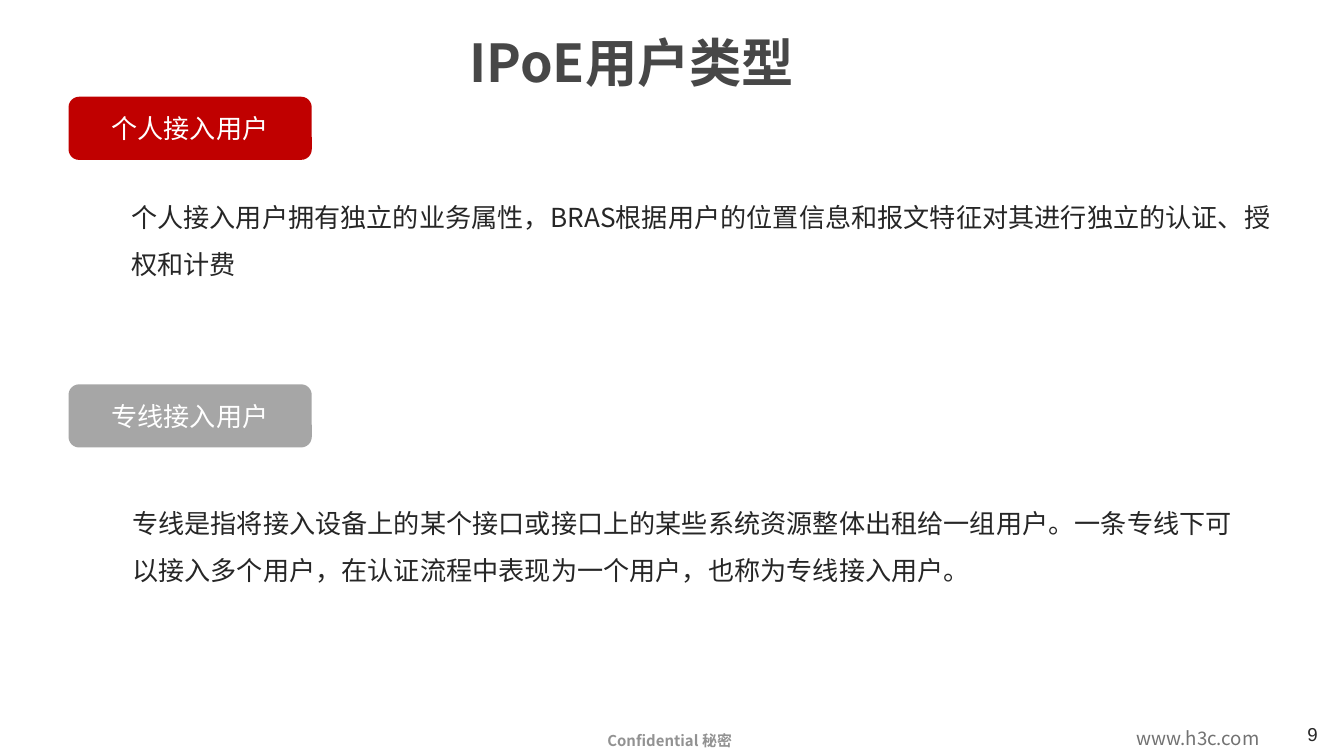
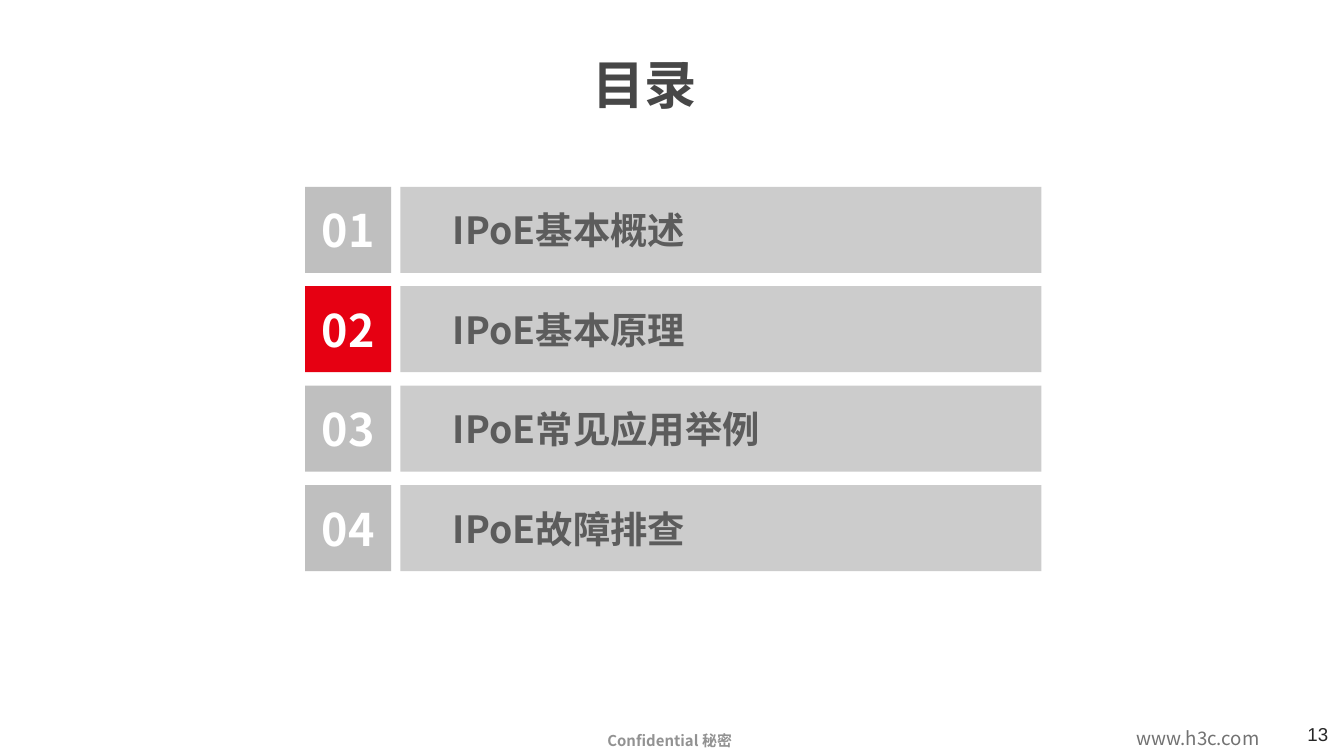
from lxml.etree import SubElement
from pptx import Presentation
from pptx.dml.color import RGBColor
from pptx.enum.shapes import MSO_SHAPE
from pptx.enum.text import MSO_ANCHOR, PP_ALIGN
from pptx.oxml.ns import qn
from pptx.util import Inches, Pt

# Content
USER_TYPES_TITLE = "IPoE用户类型"
AGENDA_TITLE = "目录"
AGENDA = ["IPoE基本概述", "IPoE基本原理", "IPoE常见应用举例", "IPoE故障排查"]
CURRENT_TOPIC = 2

# Colours and fonts
WHITE = RGBColor(0xFF, 0xFF, 0xFF)
INK = RGBColor(0x26, 0x26, 0x26)
TITLE_GREY = RGBColor(0x47, 0x47, 0x47)
TOPIC_GREY = RGBColor(0x5C, 0x5C, 0x5C)
URL_GREY = RGBColor(0x72, 0x72, 0x72)
SECRECY_GREY = RGBColor(0x92, 0x92, 0x92)
LABEL_RED = RGBColor(0xC0, 0x00, 0x00)
LABEL_GREY = RGBColor(0xA6, 0xA6, 0xA6)
NUMBER_RED = RGBColor(0xE6, 0x00, 0x12)
NUMBER_GREY = RGBColor(0xBF, 0xBF, 0xBF)
BAR_GREY = RGBColor(0xCC, 0xCC, 0xCC)
SANS = "Noto Sans CJK SC"

# Each user type: label, colour, label top, description, description box
USER_TYPES = [
    ("个人接入用户", LABEL_RED, 0.72,
     "个人接入用户拥有独立的业务属性，BRAS根据用户的位置信息和报文特征"
     "对其进行独立的认证、授权和计费",
     (0.83, 1.24, 8.82, 0.98)),
    ("专线接入用户", LABEL_GREY, 2.86,
     "专线是指将接入设备上的某个接口或接口上的某些系统资源整体出租给一组用户。"
     "一条专线下可以接入多个用户，在认证流程中表现为一个用户，也称为专线接入用户。",
     (0.83, 3.44, 8.66, 1.14)),
]


def write(holder, text, size, colour, bold=False, align=PP_ALIGN.LEFT,
          font=SANS, anchor=MSO_ANCHOR.MIDDLE, wrap=True):
    frame = holder.text_frame
    frame.text = text
    frame.word_wrap = wrap
    frame.vertical_anchor = anchor
    paragraph = frame.paragraphs[0]
    paragraph.alignment = align
    run = paragraph.runs[0]
    run.font.size = Pt(size)
    run.font.bold = bold
    run.font.color.rgb = colour
    run.font.name = font
    # East Asian glyphs take the same font
    SubElement(run.font._element, qn("a:ea"), typeface=font)
    return frame


def add_text(slide, box, text, size, colour, **style):
    holder = slide.shapes.add_textbox(*map(Inches, box))
    return write(holder, text, size, colour, **style)


def add_block(slide, kind, box, fill, text, size, colour, **style):
    block = slide.shapes.add_shape(kind, *map(Inches, box))
    block.shadow.inherit = False
    block.fill.solid()
    block.fill.fore_color.rgb = fill
    block.line.fill.background()
    return write(block, text, size, colour, **style)


def add_page(deck, title, title_box, number):
    slide = deck.slides.add_slide(deck.slide_layouts[6])
    # Footer
    add_text(slide, (4.42, 5.39, 1.15, 0.24), "Confidential 秘密", 8,
             SECRECY_GREY, bold=True)
    add_text(slide, (8.36, 5.36, 1.13, 0.27), "www.h3c.com", 10, URL_GREY,
             wrap=False)
    add_text(slide, (9.63, 5.33, 0.37, 0.27), str(number), 10, INK,
             font="Arial", anchor=MSO_ANCHOR.TOP, wrap=False)
    # Title
    add_text(slide, title_box, title, 28, TITLE_GREY, bold=True,
             align=PP_ALIGN.CENTER)
    return slide


def build_user_types(deck):
    slide = add_page(deck, USER_TYPES_TITLE, (0.2, 0.21, 9, 0.5), 9)
    rounded = MSO_SHAPE.ROUNDED_RECTANGLE
    for label, fill, top, description, box in USER_TYPES:
        add_block(slide, rounded, (0.51, top, 1.81, 0.47), fill, label, 14,
                  WHITE, align=PP_ALIGN.CENTER)
        frame = add_block(slide, rounded, box, WHITE, description, 14, INK)
        frame.paragraphs[0].line_spacing = 1.5


def build_agenda(deck):
    slide = add_page(deck, AGENDA_TITLE, (0.5, 0.37, 8.59, 0.5), 13)
    first_top, pitch, height = 1.39, 0.74, 0.64
    for number, topic in enumerate(AGENDA, 1):
        top = first_top + (number - 1) * pitch
        fill = NUMBER_RED if number == CURRENT_TOPIC else NUMBER_GREY
        badge = add_block(slide, MSO_SHAPE.RECTANGLE,
                          (2.27, top, height, height), fill, f"{number:02}",
                          24, WHITE, bold=True, align=PP_ALIGN.CENTER)
        badge.margin_left = badge.margin_right = Inches(0.07)
        bar = add_block(slide, MSO_SHAPE.RECTANGLE, (2.98, top, 4.77, height),
                        BAR_GREY, topic, 20, TOPIC_GREY, bold=True)
        bar.margin_left = Inches(0.39)


def main():
    deck = Presentation()
    # Widescreen, 16:9
    deck.slide_width = Inches(10)
    deck.slide_height = deck.slide_width * 9 // 16
    build_user_types(deck)
    build_agenda(deck)
    deck.save("out.pptx")


if __name__ == "__main__":
    main()
